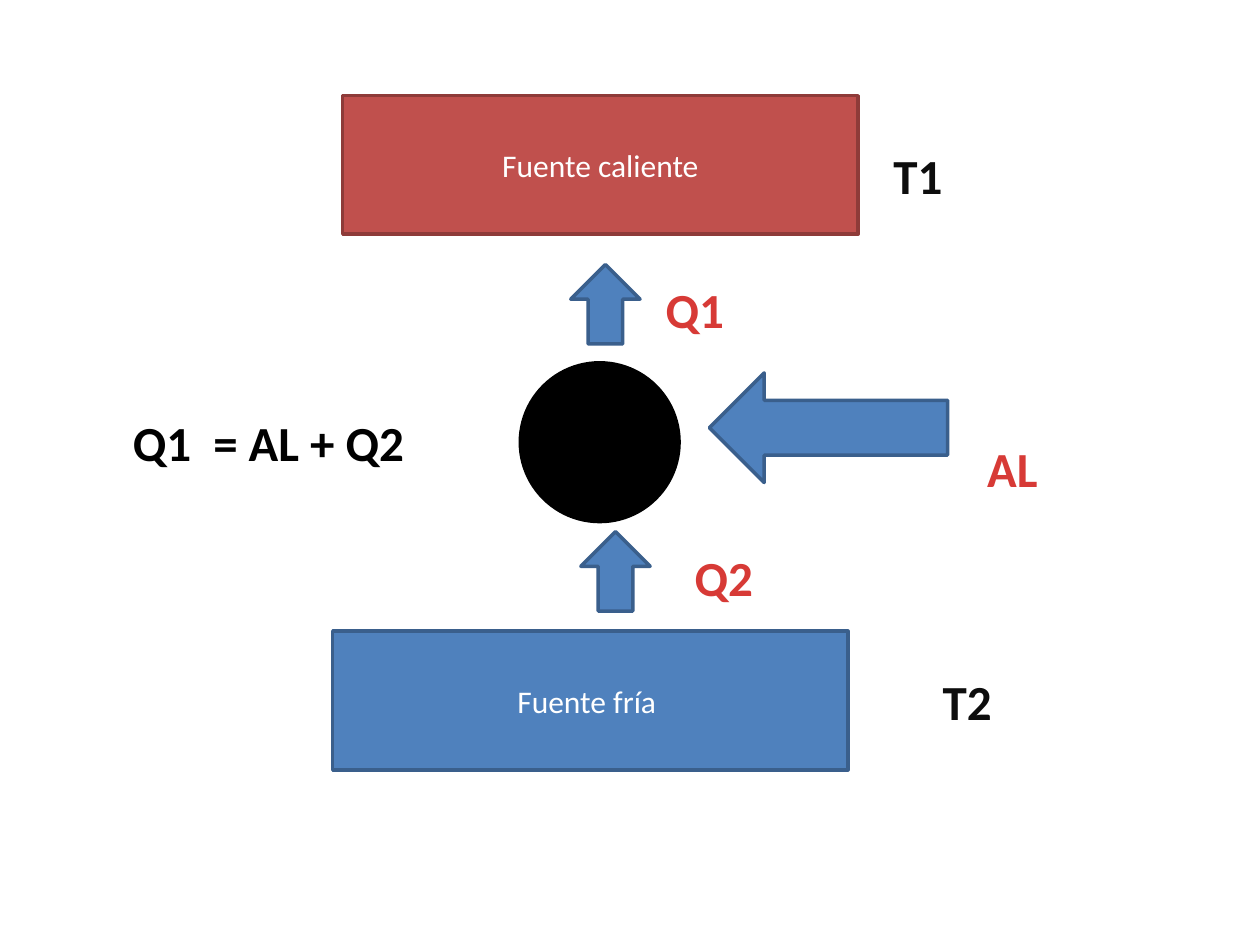
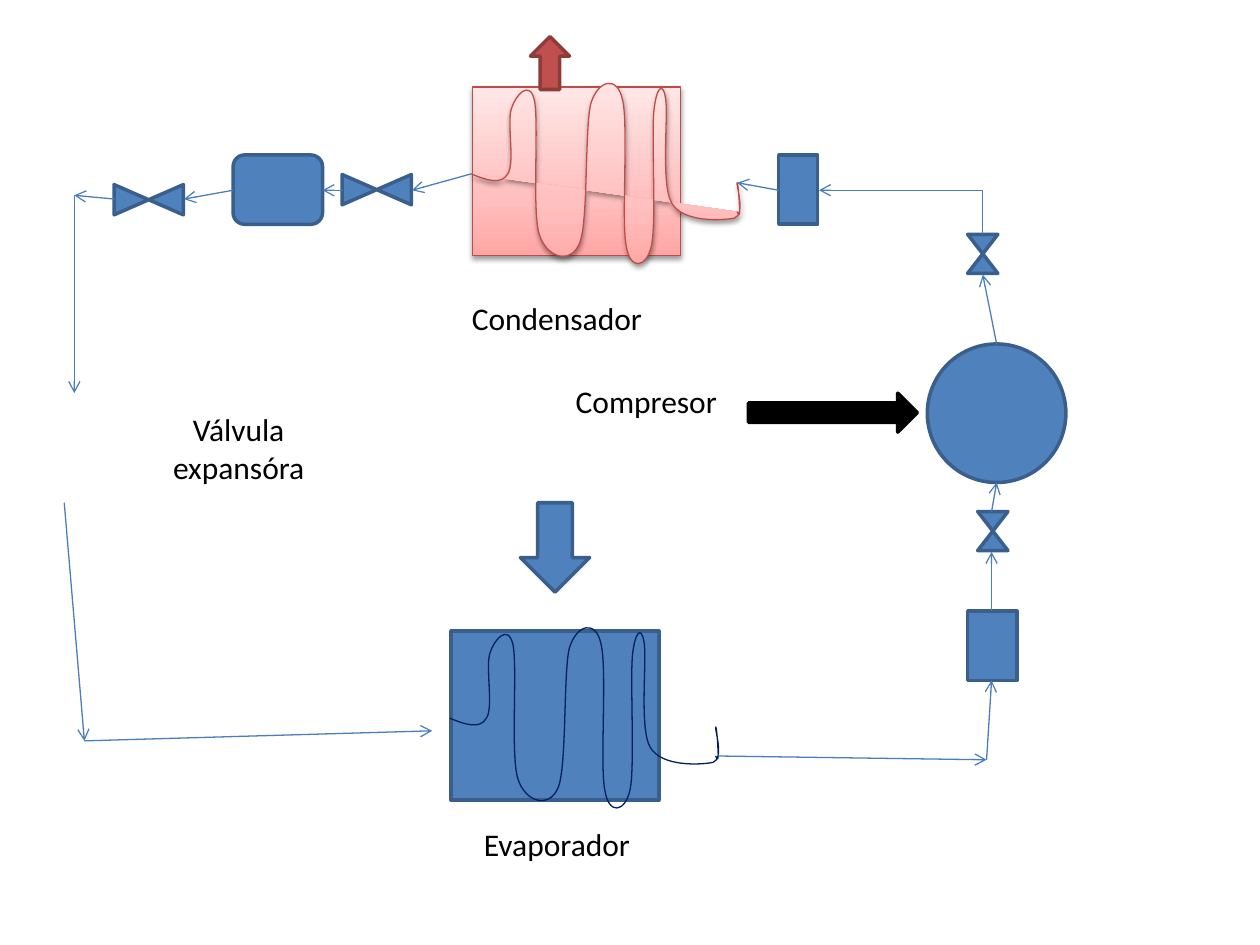
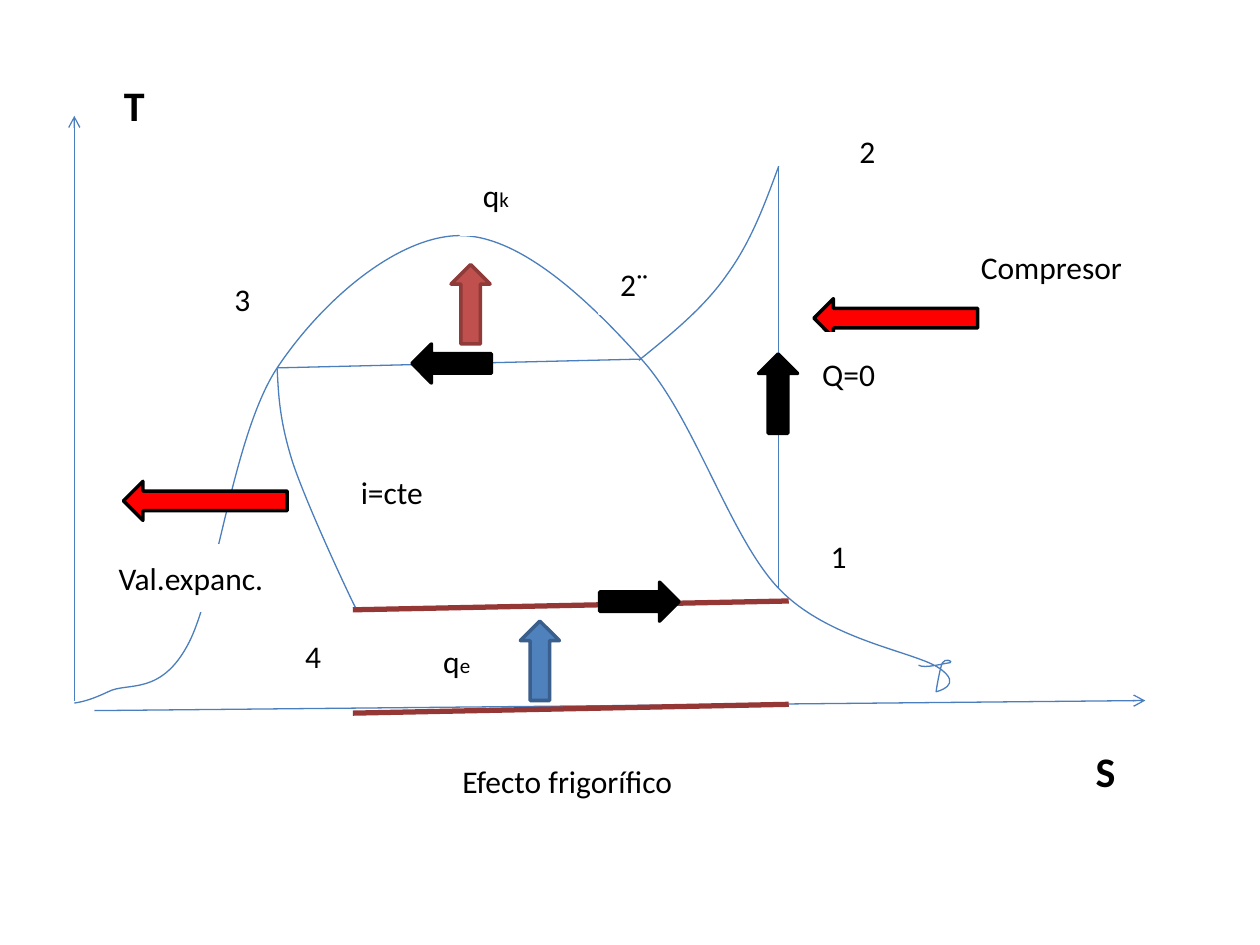
from copy import deepcopy

from lxml.etree import SubElement
from pptx import Presentation
from pptx.dml.color import RGBColor
from pptx.enum.shapes import MSO_CONNECTOR as CONN, MSO_SHAPE as SHAPE
from pptx.enum.text import MSO_ANCHOR as ANCHOR, PP_ALIGN as ALIGN
from pptx.oxml.ns import qn
from pptx.util import Inches, Pt

FONT = "Calibri"
WHITE, BLACK, INK = "FFFFFF", "000000", "0D0D0D"
PIPE, COIL_BLUE, COIL_RED, EFFECT, HEAT = "4B7EBC", "002060", "BF4C48", "953735", "D73A36"
BLUE_STYLE = ("4F81BD", "3A5F8C")
RED_STYLE = ("C0504D", "8E3B39")
BLACK_STYLE = (BLACK, BLACK)
WHITE_STYLE = (WHITE, WHITE)
SIGNAL_STYLE = ("FF0000", BLACK)
WARM_STOPS = [(0, "FFA6A5"), (0.35, "FFC0BF"), (1, "FFE7E7")]

COIL = [
    (0, 0), (0.12, 0.05), (0.24, 0.09), (0.29, 0), (0.35, -0.08), (0.28, -0.42), (0.32, -0.52),
    (0.35, -0.62), (0.46, -0.75), (0.5, -0.59), (0.54, -0.42), (0.48, 0.29), (0.54, 0.48),
    (0.6, 0.67), (0.79, 0.72), (0.86, 0.55), (0.93, 0.38), (0.9, -0.37), (0.95, -0.56),
    (1.01, -0.75), (1.16, -0.78), (1.2, -0.59), (1.25, -0.4), (1.19, 0.38), (1.23, 0.57),
    (1.26, 0.77), (1.39, 0.75), (1.43, 0.57), (1.47, 0.39), (1.43, -0.3), (1.45, -0.5),
    (1.47, -0.69), (1.52, -0.73), (1.54, -0.61), (1.57, -0.49), (1.5, 0.07), (1.59, 0.23),
    (1.68, 0.39), (2, 0.37), (2.09, 0.35), (2.18, 0.32), (2.1, 0.08), (2.11, 0.07),
    (2.12, 0.07), (2.13, 0.26), (2.13, 0.3), (2.13, 0.34), (2.12, 0.32), (2.11, 0.3),
]
SATURATION = [
    (0.59, 5.58), (0.65, 5.57), (0.71, 5.56), (0.86, 5.49), (1.01, 5.41), (1.28, 5.53),
    (1.5, 5.1), (1.72, 4.67), (1.85, 3.45), (2.2, 2.92), (2.56, 2.38), (3.15, 1.88),
    (3.64, 1.87), (4.12, 1.86), (4.67, 2.38), (5.09, 2.85), (5.51, 3.31), (5.79, 4.26),
    (6.18, 4.67), (6.57, 5.08), (7.25, 5.17), (7.45, 5.3), (7.66, 5.44), (7.43, 5.49),
    (7.43, 5.49), (7.43, 5.48), (7.46, 5.3), (7.48, 5.26), (7.5, 5.22), (7.57, 5.25),
    (7.54, 5.26), (7.51, 5.26), (7.34, 5.31), (7.29, 5.28),
]
EXPANSION = [(2.2, 2.93), (2.21, 3.14), (2.22, 3.34), (2.32, 3.66),
             (2.42, 3.97), (2.74, 4.66), (2.82, 4.82)]
SUPERHEAT = [(5.07, 2.86), (5.33, 2.65), (5.59, 2.44), (5.77, 2.18),
             (5.96, 1.92), (6.07, 1.62), (6.18, 1.32)]


def rgb(color):
    """Turn a hex string into a colour."""
    return RGBColor.from_string(color)


def set_line(sp, color, width):
    """Set the colour and width in points of an outline."""
    sp.line.color.rgb = rgb(color)
    sp.line.width = Pt(width)


def add_block(slide, kind, box, style, rotation=0):
    """Add a preset shape with a (fill, line) style."""
    sp = slide.shapes.add_shape(kind, *map(Inches, box))
    fill, line = style
    sp.fill.solid()
    sp.fill.fore_color.rgb = rgb(fill)
    set_line(sp, line, 2)
    sp.shadow.inherit = False
    sp.rotation = rotation
    return sp


def add_run(p, text, size, color, bold):
    """Add one run to a paragraph."""
    r = p.add_run()
    r.text = text
    r.font.name = FONT
    r.font.size = Pt(size)
    r.font.bold = bold
    r.font.color.rgb = rgb(color)


def add_label(slide, box, text, size=18, color=BLACK, bold=False, style=WHITE_STYLE, sub=""):
    """Add a rectangle with centred text and an optional small suffix."""
    sp = add_block(slide, SHAPE.RECTANGLE, box, style)
    tf = sp.text_frame
    tf.word_wrap = True
    tf.vertical_anchor = ANCHOR.MIDDLE
    p = tf.paragraphs[0]
    p.alignment = ALIGN.CENTER
    add_run(p, text, size, color, bold)
    if sub:
        add_run(p, sub, 12, color, bold)


def finish_line(cxn, color, width, arrow):
    """Style a connector and drop its shadow."""
    set_line(cxn, color, width)
    sp_pr = cxn._element.spPr
    if arrow:
        SubElement(sp_pr.find(qn("a:ln")), qn("a:tailEnd"), type="arrow")
    SubElement(sp_pr, qn("a:effectLst"))


def add_line(slide, start, end, color=PIPE, width=0.75, arrow=False):
    """Add a straight connector between two points."""
    cxn = slide.shapes.add_connector(CONN.STRAIGHT, *map(Inches, (*start, *end)))
    finish_line(cxn, color, width, arrow)


def add_pipe(slide, *points):
    """Join successive points with arrows."""
    for start, end in zip(points, points[1:]):
        add_line(slide, start, end, arrow=True)


def add_elbow(slide, start, end):
    """Add a one-bend arrow that goes up and then left."""
    (x1, y1), (x2, y2) = start, end
    cx, cy = (x1 + x2) / 2, (y1 + y2) / 2
    dx, dy = (y1 - y2) / 2, (x1 - x2) / 2
    ends = (cx - dx, cy + dy, cx + dx, cy - dy)
    cxn = slide.shapes.add_connector(CONN.ELBOW, *map(Inches, ends))
    sp_pr = cxn._element.spPr
    sp_pr.find(qn("a:xfrm")).set("rot", str(270 * 60000))
    sp_pr.find(qn("a:prstGeom")).set("prst", "bentConnector2")
    finish_line(cxn, PIPE, 0.75, True)


def add_curve(slide, points, color=PIPE):
    """Add an open outline through cubic Bézier points."""
    start, *rest = [(Inches(x), Inches(y)) for x, y in points]
    builder = slide.shapes.build_freeform(*start)
    builder.add_line_segments(rest, close=False)
    sp = builder.convert_to_shape()
    outline = sp._element.spPr.find(".//" + qn("a:path"))
    for i, segment in enumerate(outline.findall(qn("a:lnTo"))):
        if i % 3 == 0:
            cubic = SubElement(outline, qn("a:cubicBezTo"))
        cubic.append(segment[0])
        outline.remove(segment)
    sp.fill.background()
    set_line(sp, color, 0.75)
    sp.shadow.inherit = False
    return sp


def add_coil(slide, x, y, color):
    """Add a heat exchanger coil that starts at a point."""
    return add_curve(slide, [(x + dx, y + dy) for dx, dy in COIL], color)


def make_warm(sp):
    """Give a shape the warm gradient, a thin red line and a soft shadow."""
    sp.fill.gradient()
    sp.fill.gradient_angle = 90
    stop_list = sp._element.spPr.find(".//" + qn("a:gsLst"))
    stop_list.append(deepcopy(stop_list[0]))
    for stop, (position, color) in zip(sp.fill.gradient_stops, WARM_STOPS):
        stop.position = position
        stop.color.rgb = rgb(color)
    set_line(sp, COIL_RED, 0.75)
    shadow = SubElement(sp._element.spPr.find(qn("a:effectLst")), qn("a:outerShdw"),
                        blurRad=str(Pt(3.1)), dist=str(Pt(1.6)), dir="5400000", rotWithShape="0")
    black = SubElement(shadow, qn("a:srgbClr"), val=BLACK)
    SubElement(black, qn("a:alpha"), val="38000")


def build_heat_balance(slide):
    """Show the heat pumped from the cold to the hot source."""
    add_label(slide, (2.72, 0.76, 4.09, 1.1), "Fuente caliente", color=WHITE, style=RED_STYLE)
    add_label(slide, (2.64, 5.01, 4.09, 1.1), "Fuente fría ", color=WHITE, style=BLUE_STYLE)
    add_block(slide, SHAPE.OVAL, (4.13, 2.88, 1.26, 1.26), BLACK_STYLE)
    for x, y, text in [(5.16, 2.18, "Q1"), (5.39, 4.3, "Q2"), (7.68, 3.44, "AL")]:
        add_label(slide, (x, y, 0.71, 0.55), text, 28, HEAT, True)
    for x, y, text in [(6.89, 0.99, "T1"), (7.28, 5.17, "T2")]:
        add_label(slide, (x, y, 0.79, 0.79), text, 28, INK, True)
    add_label(slide, (0.91, 3.04, 2.44, 0.94), "Q1  = AL + Q2", 28, bold=True)
    for x, y in [(4.61, 4.22), (4.53, 2.1)]:
        add_block(slide, SHAPE.UP_ARROW, (x, y, 0.55, 0.63), BLUE_STYLE)
    add_block(slide, SHAPE.LEFT_ARROW, (5.63, 2.96, 1.89, 0.87), BLUE_STYLE)


def build_circuit(slide):
    """Draw the refrigeration circuit."""
    for kind, box in [
        (SHAPE.ROUNDED_RECTANGLE, (1.85, 1.23, 0.71, 0.55)),
        (SHAPE.RECTANGLE, (6.18, 1.23, 0.31, 0.55)),
        (SHAPE.OVAL, (7.36, 2.73, 1.1, 1.1)),
        (SHAPE.RECTANGLE, (7.68, 4.85, 0.39, 0.55)),
        (SHAPE.RECTANGLE, (3.58, 5.01, 1.65, 1.34)),
        (SHAPE.DOWN_ARROW, (4.13, 3.99, 0.55, 0.71)),
    ]:
        add_block(slide, kind, box, BLUE_STYLE)
    for x, y in [(7.68, 1.86), (7.76, 4.06)]:
        add_block(slide, SHAPE.FLOWCHART_COLLATE, (x, y, 0.24, 0.31), BLUE_STYLE)
    for x, y in [(2.87, 1.23), (1.06, 1.31)]:
        add_block(slide, SHAPE.FLOWCHART_COLLATE, (x, y, 0.24, 0.55), BLUE_STYLE, 270)

    add_coil(slide, 3.57, 5.7, COIL_BLUE)
    make_warm(add_block(slide, SHAPE.RECTANGLE, (3.75, 0.69, 1.65, 1.34), RED_STYLE))
    make_warm(add_coil(slide, 3.74, 1.38, COIL_RED))

    add_pipe(slide, (5.7, 6), (7.83, 6.03), (7.87, 5.4))
    add_pipe(slide, (7.87, 4.85), (7.87, 4.38))
    add_pipe(slide, (7.87, 4.06), (7.91, 3.83))
    add_pipe(slide, (7.91, 2.73), (7.8, 2.18))
    add_elbow(slide, (7.8, 1.86), (6.5, 1.51))
    add_pipe(slide, (6.18, 1.51), (5.85, 1.45))
    add_pipe(slide, (3.74, 1.38), (3.27, 1.51))
    add_pipe(slide, (2.72, 1.51), (2.56, 1.51))
    add_pipe(slide, (1.85, 1.51), (1.46, 1.58))
    add_pipe(slide, (0.91, 1.58), (0.59, 1.55), (0.59, 3.12))
    add_pipe(slide, (0.51, 3.99), (0.67, 5.88), (3.43, 5.8))

    add_block(slide, SHAPE.UP_ARROW, (4.21, 0.29, 0.31, 0.42), RED_STYLE)
    add_block(slide, SHAPE.RIGHT_ARROW, (5.94, 3.12, 1.34, 0.31), BLACK_STYLE)
    add_label(slide, (4.41, 2.94, 1.44, 0.49), "Compresor")
    add_label(slide, (3.43, 2.33, 1.98, 0.39), "Condensador")
    add_label(slide, (0.91, 3.28, 1.97, 0.55), "Válvula expansóra")
    add_label(slide, (3.43, 6.5, 1.98, 0.39), "Evaporador")


def build_ts_diagram(slide):
    """Draw the cycle on temperature and entropy axes."""
    add_pipe(slide, (0.59, 5.56), (0.59, 0.92))
    add_pipe(slide, (0.75, 5.64), (9.09, 5.56))
    add_curve(slide, SATURATION)
    add_line(slide, (2.2, 2.92), (5.09, 2.85))
    for y in (4.84, 5.66):
        add_line(slide, (2.8, y), (6.26, y - 0.07), EFFECT, 3)
    add_line(slide, (6.18, 4.67), (6.18, 1.32))
    add_curve(slide, EXPANSION)
    add_curve(slide, SUPERHEAT)

    for x, y, style in [(3.58, 2.1, RED_STYLE), (4.13, 4.93, BLUE_STYLE), (6.02, 2.81, BLACK_STYLE)]:
        add_block(slide, SHAPE.UP_ARROW, (x, y, 0.31, 0.63), style)
    add_block(slide, SHAPE.LEFT_ARROW, (3.27, 2.73, 0.63, 0.31), BLACK_STYLE)
    add_block(slide, SHAPE.RIGHT_ARROW, (4.76, 4.62, 0.63, 0.31), BLACK_STYLE)
    for x, y in [(6.46, 2.37), (0.98, 3.82)]:
        add_block(slide, SHAPE.LEFT_ARROW, (x, y, 1.3, 0.31), SIGNAL_STYLE)

    for x, y, sub in [(3.66, 1.23, "k"), (3.35, 4.93, "e")]:
        add_label(slide, (x, y, 0.55, 0.63), "q", sub=sub)
    for x, y, state in [(6.34, 4.14, "1"), (2.17, 4.93, "4"), (1.61, 2.1, "3"), (6.57, 0.92, "2")]:
        add_label(slide, (x, y, 0.63, 0.55), state)
    for x, y, axis in [(8.54, 5.88, "S"), (0.83, 0.6, "T")]:
        add_label(slide, (x, y, 0.47, 0.47), axis, 24, bold=True)
    add_label(slide, (4.76, 2.02, 0.55, 0.47), "2¨")
    add_label(slide, (6.42, 2.65, 0.63, 0.63), "Q=0")
    add_label(slide, (2.64, 3.59, 0.94, 0.63), "i=cte")
    add_label(slide, (7.36, 1.86, 1.97, 0.51), "Compresor")
    add_label(slide, (0.75, 4.33, 1.53, 0.51), "Val.expanc.")
    add_label(slide, (2.8, 5.88, 3.46, 0.63), "Efecto frigorífico ")


def main():
    """Build the three slides and save them."""
    prs = Presentation()
    prs.slide_width, prs.slide_height = Inches(10), Inches(7.5)
    for build in (build_heat_balance, build_circuit, build_ts_diagram):
        build(prs.slides.add_slide(prs.slide_layouts[6]))
    prs.save("out.pptx")


if __name__ == "__main__":
    main()
